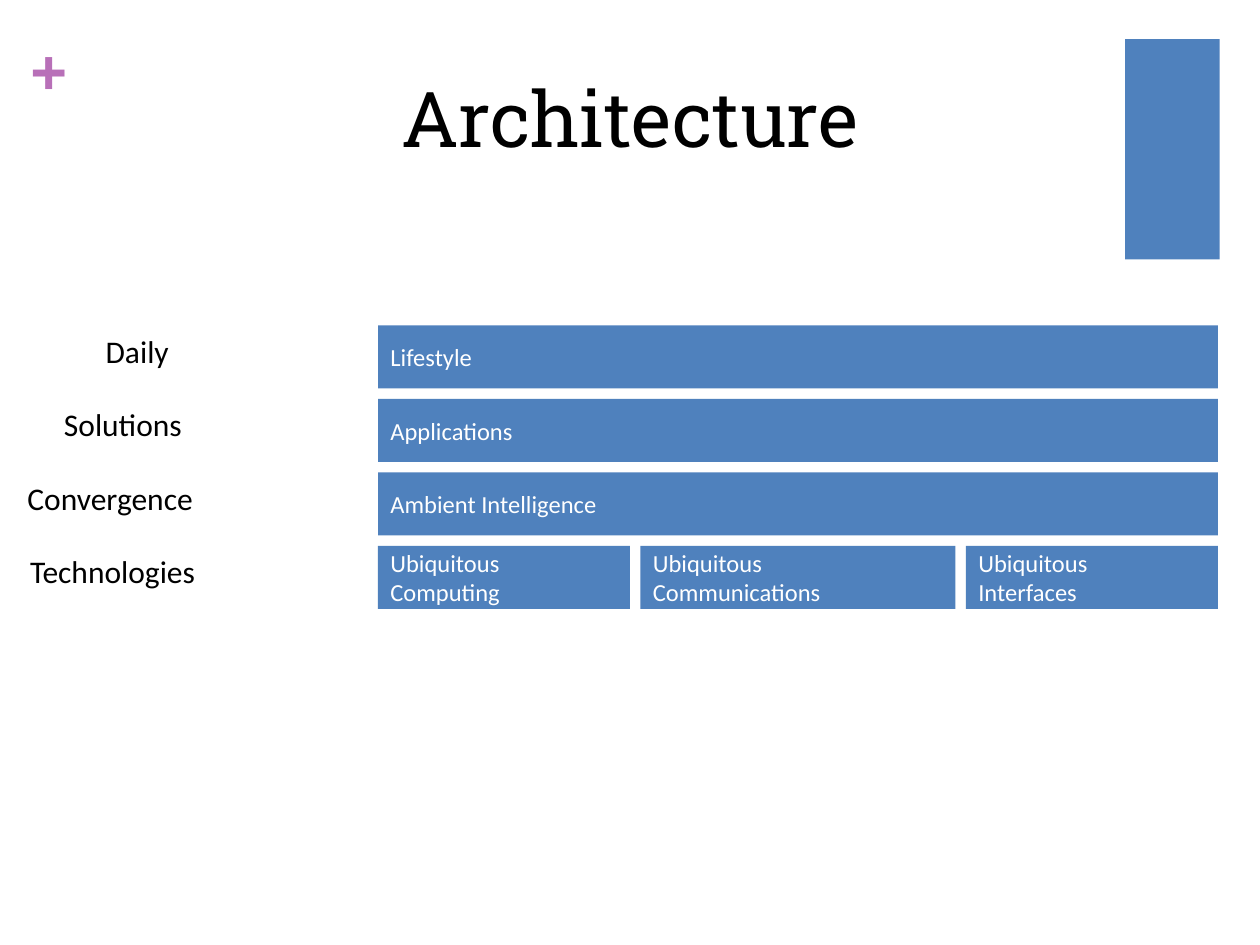
from pptx import Presentation
from pptx.dml.color import RGBColor
from pptx.enum.shapes import MSO_SHAPE as Shape
from pptx.enum.text import MSO_ANCHOR as Anchor, PP_ALIGN as Align
from pptx.util import Inches, Pt

BLUE, PURPLE, BLACK, WHITE = "4F81BD", "B870B8", "000000", "FFFFFF"

# The architecture grid counts in twelfths of an inch
UNIT = 1 / 12
ROW_HEIGHT, GAP = 6, 1

# Row label, label's left edge and width in inches, (bar text, width in units)
LAYERS = [
    ("Daily", 0.74, 0.87, [("Lifestyle", 80)]),
    ("Solutions", 0.41, 1.37, [("Applications", 80)]),
    ("Convergence", 0.12, 1.94, [("Ambient Intelligence", 80)]),
    ("Technologies", 0.14, 1.93, [("Ubiquitous\nComputing", 24),
                                  ("Ubiquitous\nCommunications", 30),
                                  ("Ubiquitous\nInterfaces", 24)]),
]


def color(value):
    return RGBColor.from_string(value)


def write(shape, text, size, font, ink, align=Align.LEFT,
          anchor=Anchor.TOP, bold=False):
    frame = shape.text_frame
    frame.text = text
    frame.word_wrap = True
    frame.vertical_anchor = anchor
    for para in frame.paragraphs:
        para.alignment = align
        for span in para.runs:
            span.font.size = Pt(size)
            span.font.name = font
            span.font.bold = bold
            span.font.color.rgb = color(ink)


def add_text(page, box, text, size, font, ink, **style):
    shape = page.shapes.add_textbox(*map(Inches, box))
    write(shape, text, size, font, ink, **style)
    return shape


def add_block(page, box):
    shape = page.shapes.add_shape(Shape.RECTANGLE, *map(Inches, box))
    shape.shadow.inherit = False
    shape.fill.solid()
    shape.fill.fore_color.rgb = color(BLUE)
    shape.line.fill.background()
    return shape


def add_header(page, box):
    left, top, width, height = box
    # Corner block and plus sign
    add_block(page, (8.93, 0.31, 0.75, 1.75))
    plus = add_text(page, (0.24, 0.25, 0.28, 0.61), "+", 36, "Arial", PURPLE,
                    bold=True)
    frame = plus.text_frame
    frame.margin_left = frame.margin_right = 0
    frame.margin_top = frame.margin_bottom = 0
    # Title
    add_text(page, (left, top, width, height), "Architecture", 44,
             "Roboto Slab", BLACK, align=Align.CENTER, anchor=Anchor.MIDDLE)


def add_layers(page, left, top):
    for row, (label, label_left, label_width, bars) in enumerate(LAYERS):
        row_top = top + row * (ROW_HEIGHT + GAP) * UNIT
        # Row label
        add_text(page, (label_left, row_top, label_width, 0.44), label, 18,
                 "Calibri", BLACK)
        # Bars of the row, side by side
        bar_left = left
        for text, units in bars:
            bar = add_block(page, (bar_left, row_top, units * UNIT,
                                   ROW_HEIGHT * UNIT))
            write(bar, text, 14, "Calibri", WHITE, anchor=Anchor.MIDDLE)
            bar_left += (units + GAP) * UNIT


def main():
    deck = Presentation()
    deck.slide_width, deck.slide_height = Inches(10), Inches(7.5)
    page = deck.slides.add_slide(deck.slide_layouts[6])
    add_header(page, (0.5, 0.3, 9, 1.25))
    add_layers(page, left=36 * UNIT, top=31 * UNIT)
    deck.save("out.pptx")


if __name__ == "__main__":
    main()
